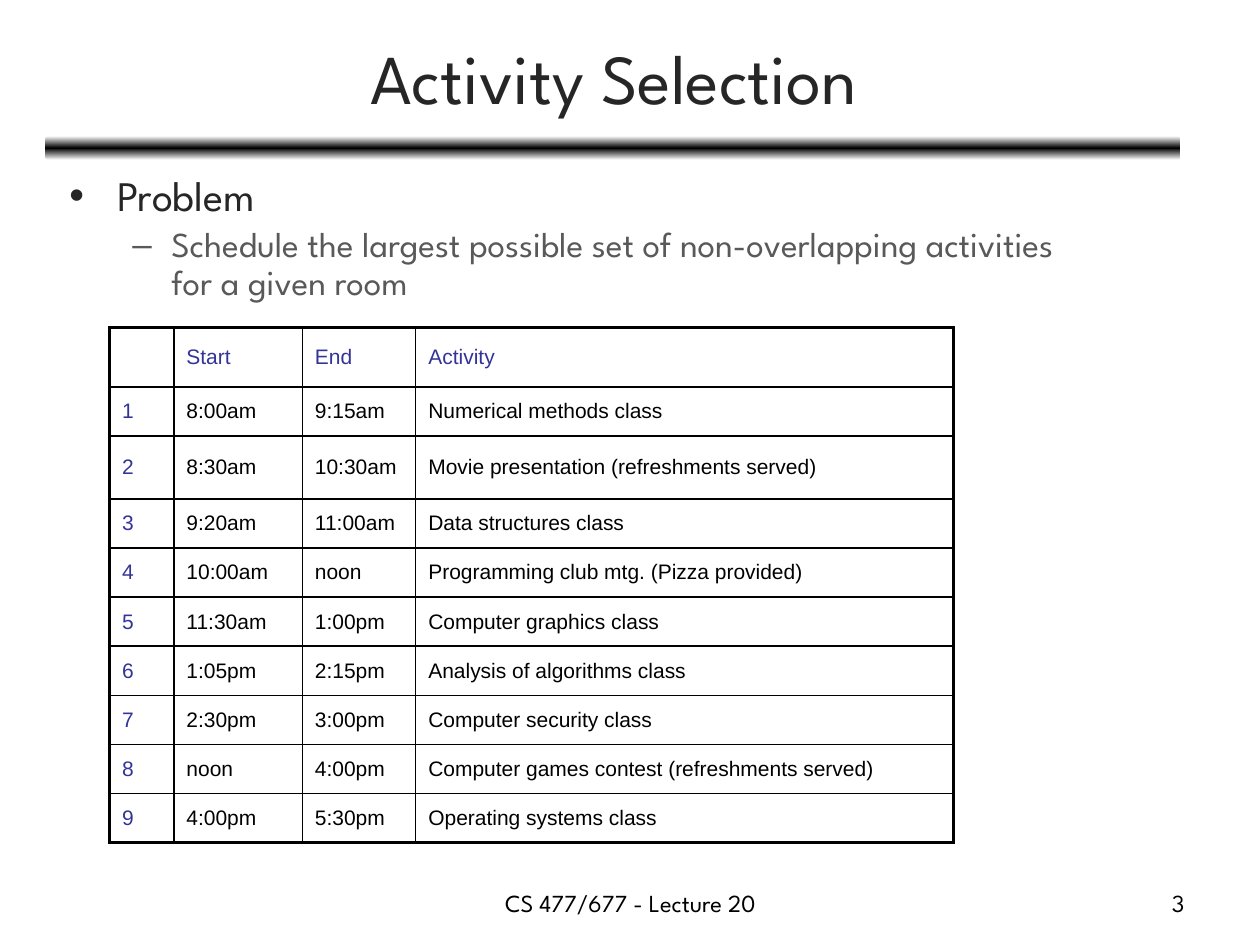
"""Build the Activity Selection lecture slide."""
from copy import deepcopy

from lxml.etree import SubElement
from pptx import Presentation
from pptx.dml.color import RGBColor
from pptx.enum.shapes import MSO_SHAPE
from pptx.enum.text import MSO_ANCHOR, MSO_AUTO_SIZE, PP_ALIGN
from pptx.oxml.ns import qn
from pptx.util import Inches, Pt

BLACK = RGBColor(0x00, 0x00, 0x00)
WHITE = RGBColor(0xFF, 0xFF, 0xFF)
DARK = RGBColor(0x26, 0x26, 0x26)
GRAY = RGBColor(0x59, 0x59, 0x59)
BLUE = RGBColor(0x33, 0x33, 0x99)


def write_text(paragraph, text, font="League Spartan", size=14, color=BLACK,
               align=PP_ALIGN.LEFT, space_before=0):
    paragraph.alignment = align
    paragraph.space_before = Pt(space_before)
    run = paragraph.add_run()
    run.text = text
    run.font.name = font
    run.font.size = Pt(size)
    run.font.color.rgb = color


def add_border(cell, side, width):
    line = SubElement(cell._tc.get_or_add_tcPr(), qn(f"a:ln{side}"), w=str(Pt(width)))
    fill = SubElement(line, qn("a:solidFill"))
    SubElement(fill, qn("a:srgbClr"), val=str(BLACK))


presentation = Presentation()
presentation.slide_width = Inches(10)
presentation.slide_height = Inches(7.5)
slide = presentation.slides.add_slide(presentation.slide_layouts[1])

rule = slide.shapes.add_shape(MSO_SHAPE.ROUNDED_RECTANGLE, Inches(0.36), Inches(1.08),
                              Inches(9.01), Inches(0.19))
rule.shadow.inherit = False
rule.line.fill.background()
rule.fill.gradient()
rule.fill.gradient_angle = 90
stop_list = rule._element.spPr.find(".//" + qn("a:gsLst"))
stop_list.append(deepcopy(stop_list[0]))
for stop, position, color in zip(rule.fill.gradient_stops, (0, 0.5, 1), (WHITE, BLACK, WHITE)):
    stop.position = position
    stop.color.rgb = color

title = slide.shapes.title
title.left, title.top = Inches(0.37), Inches(0.11)
title.width, title.height = Inches(9), Inches(0.99)
title.text_frame.auto_size = MSO_AUTO_SIZE.NONE
title.text_frame.vertical_anchor = MSO_ANCHOR.MIDDLE
write_text(title.text_frame.paragraphs[0], "Activity Selection", size=40, color=DARK,
           align=PP_ALIGN.CENTER)

body = slide.placeholders[1]
body.left, body.top = Inches(0.45), Inches(1.34)
body.width, body.height = Inches(8.3), Inches(1.21)
body.text_frame.auto_size = MSO_AUTO_SIZE.NONE
body.text_frame.add_paragraph()
bullets = [
    ("Problem", 24, DARK, "•", 0.38, -0.38),
    ("Schedule the largest possible set of non-overlapping activities for a given room",
     20, GRAY, "–", 0.81, -0.31),
]
for level, (text, size, color, mark, margin, indent) in enumerate(bullets):
    paragraph = body.text_frame.paragraphs[level]
    paragraph.level = level
    paragraph.line_spacing = 0.9
    write_text(paragraph, text, size=size, color=color, space_before=size * 0.2)
    properties = paragraph._p.get_or_add_pPr()
    properties.set("marL", str(Inches(margin)))
    properties.set("indent", str(Inches(indent)))
    SubElement(properties, qn("a:buChar"), char=mark)

rows = [
    ("", "Start", "End", "Activity"),
    ("1", "8:00am", "9:15am", "Numerical methods class"),
    ("2", "8:30am", "10:30am", "Movie presentation (refreshments served)"),
    ("3", "9:20am", "11:00am", "Data structures class"),
    ("4", "10:00am", "noon", "Programming club mtg. (Pizza provided)"),
    ("5", "11:30am", "1:00pm", "Computer graphics class"),
    ("6", "1:05pm", "2:15pm", "Analysis of algorithms class"),
    ("7", "2:30pm", "3:00pm", "Computer security class"),
    ("8", "noon", "4:00pm", "Computer games contest (refreshments served)"),
    ("9", "4:00pm", "5:30pm", "Operating systems class"),
]
column_widths = [0.51, 1.02, 0.9, 4.27]
row_heights = [0.47, 0.39, 0.5] + [0.39] * 7
table = slide.shapes.add_table(len(rows), len(column_widths), Inches(0.87), Inches(2.6),
                               Inches(sum(column_widths)), Inches(sum(row_heights))).table
table.first_row = False
table.horz_banding = False
for column, width in zip(table.columns, column_widths):
    column.width = Inches(width)
for row, height in zip(table.rows, row_heights):
    row.height = Inches(height)

last_row, last_column = len(rows) - 1, len(column_widths) - 1
for row_index, row in enumerate(rows):
    for column_index, text in enumerate(row):
        cell = table.cell(row_index, column_index)
        cell.vertical_anchor = MSO_ANCHOR.MIDDLE
        outer_sides = {"L": column_index == 0, "R": column_index == last_column,
                       "T": row_index == 0, "B": row_index == last_row}
        for side, is_outer in outer_sides.items():
            add_border(cell, side, 2.25 if is_outer else 1)
        cell.fill.background()
        if text:
            is_header = row_index == 0 or column_index == 0
            write_text(cell.text_frame.paragraphs[0], text, font="Arial", size=12,
                       color=BLUE if is_header else BLACK, space_before=2.4)

footers = [
    ("CS 477/677 - Lecture 20", 3.42, 3.17, PP_ALIGN.CENTER),
    ("3", 7.17, 2.33, PP_ALIGN.RIGHT),
]
for text, left, width, align in footers:
    footer = slide.shapes.add_textbox(Inches(left), Inches(7), Inches(width), Inches(0.35))
    footer.text_frame.word_wrap = True
    write_text(footer.text_frame.paragraphs[0], text, align=align)

presentation.save("out.pptx")
